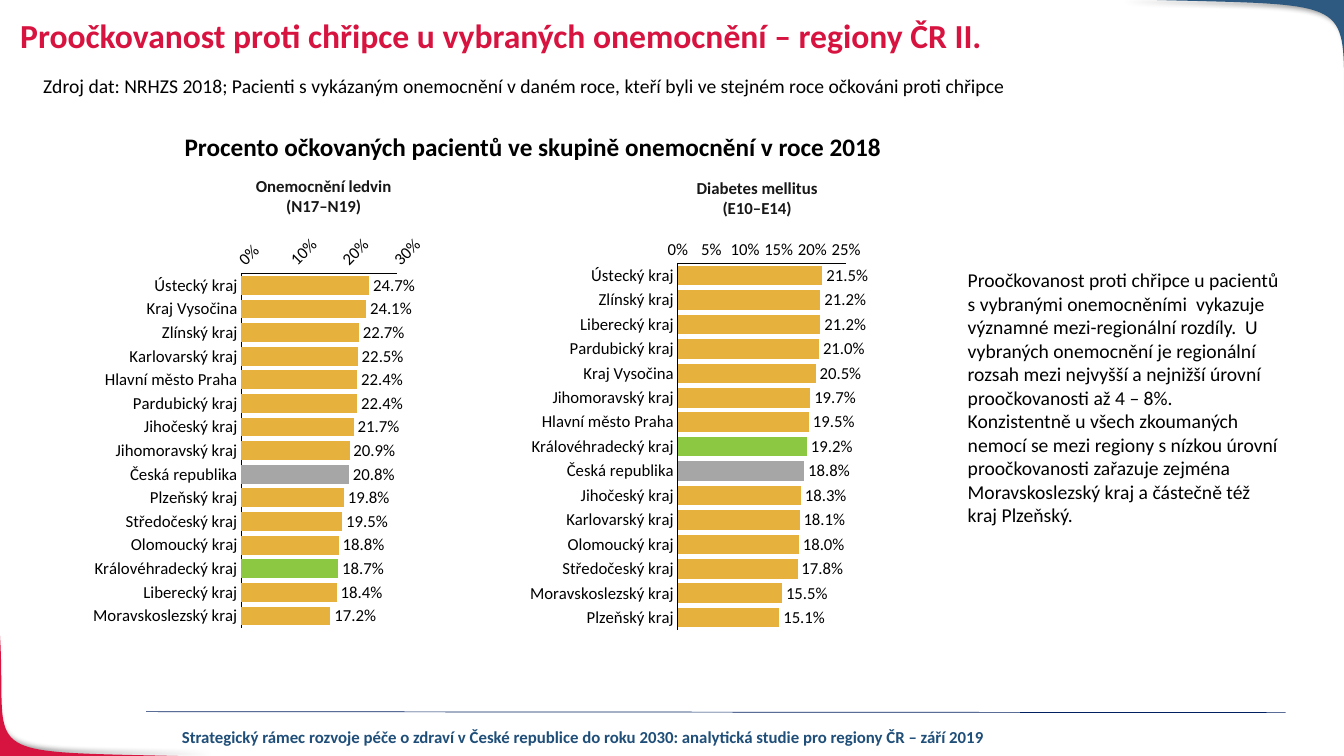
from lxml import etree
from pptx import Presentation
from pptx.chart.data import CategoryChartData
from pptx.dml.color import RGBColor
from pptx.enum.chart import XL_CHART_TYPE as ChartType
from pptx.enum.chart import XL_LABEL_POSITION as LabelPosition
from pptx.enum.chart import XL_TICK_MARK as TickMark
from pptx.enum.shapes import MSO_CONNECTOR as Connector
from pptx.enum.text import MSO_ANCHOR as Anchor
from pptx.enum.text import PP_ALIGN as Align
from pptx.oxml import parse_xml
from pptx.oxml.ns import nsdecls, qn
from pptx.util import Inches, Pt

COLORS = {
    "red": "D71440", "blue": "2E5980", "navy": "002060", "footer": "1F4E79",
    "black": "000000", "heading": "181717",
    "region": "E7B13D", "country": "A6A6A6", "highlight": "8CC841",
}
FONT = "Calibri"
SPECIAL_BARS = {"Česká republika": "country", "Královéhradecký kraj": "highlight"}

KIDNEY = [
    ("Ústecký kraj", 0.247), ("Kraj Vysočina", 0.241), ("Zlínský kraj", 0.227),
    ("Karlovarský kraj", 0.225), ("Hlavní město Praha", 0.224),
    ("Pardubický kraj", 0.224), ("Jihočeský kraj", 0.217),
    ("Jihomoravský kraj", 0.209), ("Česká republika", 0.208),
    ("Plzeňský kraj", 0.198), ("Středočeský kraj", 0.195),
    ("Olomoucký kraj", 0.188), ("Královéhradecký kraj", 0.187),
    ("Liberecký kraj", 0.184), ("Moravskoslezský kraj", 0.172),
]
DIABETES = [
    ("Ústecký kraj", 0.215), ("Zlínský kraj", 0.212), ("Liberecký kraj", 0.212),
    ("Pardubický kraj", 0.21), ("Kraj Vysočina", 0.205),
    ("Jihomoravský kraj", 0.197), ("Hlavní město Praha", 0.195),
    ("Královéhradecký kraj", 0.192), ("Česká republika", 0.188),
    ("Jihočeský kraj", 0.183), ("Karlovarský kraj", 0.181),
    ("Olomoucký kraj", 0.18), ("Středočeský kraj", 0.178),
    ("Moravskoslezský kraj", 0.155), ("Plzeňský kraj", 0.151),
]
COMMENTARY = (
    "Proočkovanost proti chřipce u pacientů s vybranými onemocněními  vykazuje "
    "významné mezi-regionální rozdíly.  U vybraných onemocnění je regionální "
    "rozsah mezi nejvyšší a nejnižší úrovní proočkovanosti až 4 – 8%. "
    "Konzistentně u všech zkoumaných nemocí se mezi regiony s nízkou úrovní "
    "proočkovanosti zařazuje zejména Moravskoslezský kraj a částečně též kraj "
    "Plzeňský."
)


def color(name):
    return RGBColor.from_string(COLORS[name])


def style_font(font, size, name="black", bold=False):
    font.name, font.size, font.bold = FONT, Pt(size), bold
    font.color.rgb = color(name)


def fill_text(shape, text, size, name="black", bold=False, align=Align.LEFT):
    frame = shape.text_frame
    frame.word_wrap = True
    frame.vertical_anchor = Anchor.TOP
    frame.text = text
    paragraph = frame.paragraphs[0]
    paragraph.alignment = align
    for run in paragraph.runs:
        style_font(run.font, size, name, bold)


def add_text(slide, box, text, size, **style):
    shape = slide.shapes.add_textbox(*map(Inches, box))
    fill_text(shape, text, size, **style)


def add_corner(slide, curve, corner, name, shadow_angle):
    """Fill the area between a cubic curve and a corner of the slide."""
    steps = 40
    points = []
    for step in range(steps + 1):
        t = step / steps
        weights = ((1 - t) ** 3, 3 * t * (1 - t) ** 2, 3 * t ** 2 * (1 - t), t ** 3)
        points.append(tuple(
            Inches(sum(weight * point[axis] for weight, point in zip(weights, curve)))
            for axis in (0, 1)))
    builder = slide.shapes.build_freeform(*points[0], scale=1.0)
    builder.add_line_segments(points[1:] + [tuple(map(Inches, corner))], close=True)
    shape = builder.convert_to_shape()
    shape.fill.solid()
    shape.fill.fore_color.rgb = color(name)
    shape.line.fill.background()
    shape._element.spPr.append(parse_xml(
        f'<a:effectLst {nsdecls("a")}><a:outerShdw blurRad="{Pt(4)}" dist="{Pt(3)}" '
        f'dir="{shadow_angle * 60000}" algn="tl" rotWithShape="0">'
        f'<a:srgbClr val="{COLORS["black"]}"><a:alpha val="40000"/></a:srgbClr>'
        '</a:outerShdw></a:effectLst>'))


def add_frame(slide):
    """Place the two corners and the footer."""
    add_corner(slide, [(2.13, 7.51), (-0.34, 7.44), (0.08, 7.59), (0, 6.3)],
               (-0.01, 7.51), "red", 225)
    add_corner(slide, [(11.11, -0.01), (13.7, 0.07), (13.26, -0.1), (13.35, 1.42)],
               (13.35, -0.01), "blue", 45)
    rule = slide.shapes.add_connector(
        Connector.STRAIGHT, *map(Inches, (1.45, 7.06, 12.75, 7.07)))
    rule.line.color.rgb = color("navy")
    rule.line.width = Pt(0.5)
    etree.SubElement(rule._element.spPr, qn("a:effectLst"))
    add_text(slide, (1.57, 7.16, 8.43, 0.3),
             "Strategický rámec rozvoje péče o zdraví v České republice do roku 2030: "
             "analytická studie pro regiony ČR – září 2019",
             12, name="footer", bold=True, align=Align.CENTER)


def set_plot_area(chart, plot_box):
    """Fix the inner plot area, given as fractions of the chart."""
    values = "".join(f'<c:{tag} val="{value}"/>' for tag, value in zip("xywh", plot_box))
    plot_area = chart._chartSpace.chart.plotArea
    for layout in plot_area.findall(qn("c:layout")):
        plot_area.remove(layout)
    plot_area.insert(0, parse_xml(
        f'<c:layout {nsdecls("c")}><c:manualLayout><c:layoutTarget val="inner"/>'
        f'<c:xMode val="edge"/><c:yMode val="edge"/>{values}</c:manualLayout></c:layout>'))


def add_region_chart(slide, left, top, heading, rows, scale, plot_box, angle=0):
    """Place a heading and, below it, a bar chart of regions."""
    add_text(slide, (left + 0.45, top - 0.58, 3.74, 0.5), heading, 12,
             name="heading", bold=True, align=Align.CENTER)
    data = CategoryChartData(number_format="0.0%")
    data.categories = [region for region, _ in rows]
    data.add_series("Series 1", [share for _, share in rows])
    chart = slide.shapes.add_chart(
        ChartType.BAR_CLUSTERED, *map(Inches, (left, top, 3.42, 4.04)), data).chart
    style_font(chart.font, 10)
    chart.has_legend = chart.has_title = False
    set_plot_area(chart, plot_box)

    for axis in (chart.category_axis, chart.value_axis):
        axis.major_tick_mark = axis.minor_tick_mark = TickMark.NONE
        axis.has_major_gridlines = False
        axis.format.line.color.rgb = color("black")
        axis.format.line.width = Pt(0.75)
        style_font(axis.tick_labels.font, 12)
    chart.category_axis.reverse_order = True
    values = chart.value_axis
    values.minimum_scale = 0
    values.maximum_scale, values.major_unit = scale
    values.tick_labels.number_format = "0%"
    values.tick_labels.number_format_is_linked = False
    body = values._element.find(qn("c:txPr")).find(qn("a:bodyPr"))
    body.set("rot", str(angle * 60000))

    plot = chart.plots[0]
    plot.gap_width = 25
    plot.vary_by_categories = False
    series = plot.series[0]
    series.format.fill.solid()
    series.format.fill.fore_color.rgb = color("region")
    for index, (region, _) in enumerate(rows):
        if region in SPECIAL_BARS:
            fill = series.points[index].format.fill
            fill.solid()
            fill.fore_color.rgb = color(SPECIAL_BARS[region])
    labels = series.data_labels
    labels.show_value = True
    labels.position = LabelPosition.OUTSIDE_END
    labels.number_format = "0.0%"
    labels.number_format_is_linked = False
    style_font(labels.font, 12)


def add_title(slide, box):
    title = slide.shapes.title
    title.left, title.top, title.width, title.height = map(Inches, box)
    fill_text(title, "Proočkovanost proti chřipce u vybraných onemocnění – regiony ČR II.",
              24, "red", bold=True)
    title.text_frame.paragraphs[0].line_spacing = 0.9


def main():
    presentation = Presentation()
    presentation.slide_width, presentation.slide_height = Inches(13.33), Inches(7.5)
    slide = presentation.slides.add_slide(presentation.slide_layouts[5])
    add_frame(slide)
    add_title(slide, (0.1, 0.14, 11.8, 0.69))
    add_text(slide, (0.33, 0.68, 10.09, 0.81),
             "Zdroj dat: NRHZS 2018; Pacienti s vykázaným onemocnění v daném roce, "
             "kteří byli ve stejném roce očkováni proti chřipce", 14)
    add_text(slide, (0, 1.25, 10.63, 0.4),
             "Procento očkovaných pacientů ve skupině onemocnění v roce 2018 ",
             18, bold=True, align=Align.CENTER)
    add_region_chart(slide, 0.89, 2.27, "Onemocnění ledvin\v(N17–N19)", KIDNEY,
                     (0.3, 0.1), (0.44, 0.11, 0.45, 0.87), angle=-45)
    add_region_chart(slide, 5.19, 2.29, "Diabetes mellitus\v(E10–E14)", DIABETES,
                     (0.25, 0.05), (0.45, 0.08, 0.49, 0.9))
    add_text(slide, (9.5, 2.61, 3.3, 2.92), COMMENTARY, 14)
    presentation.save("out.pptx")


if __name__ == "__main__":
    main()
